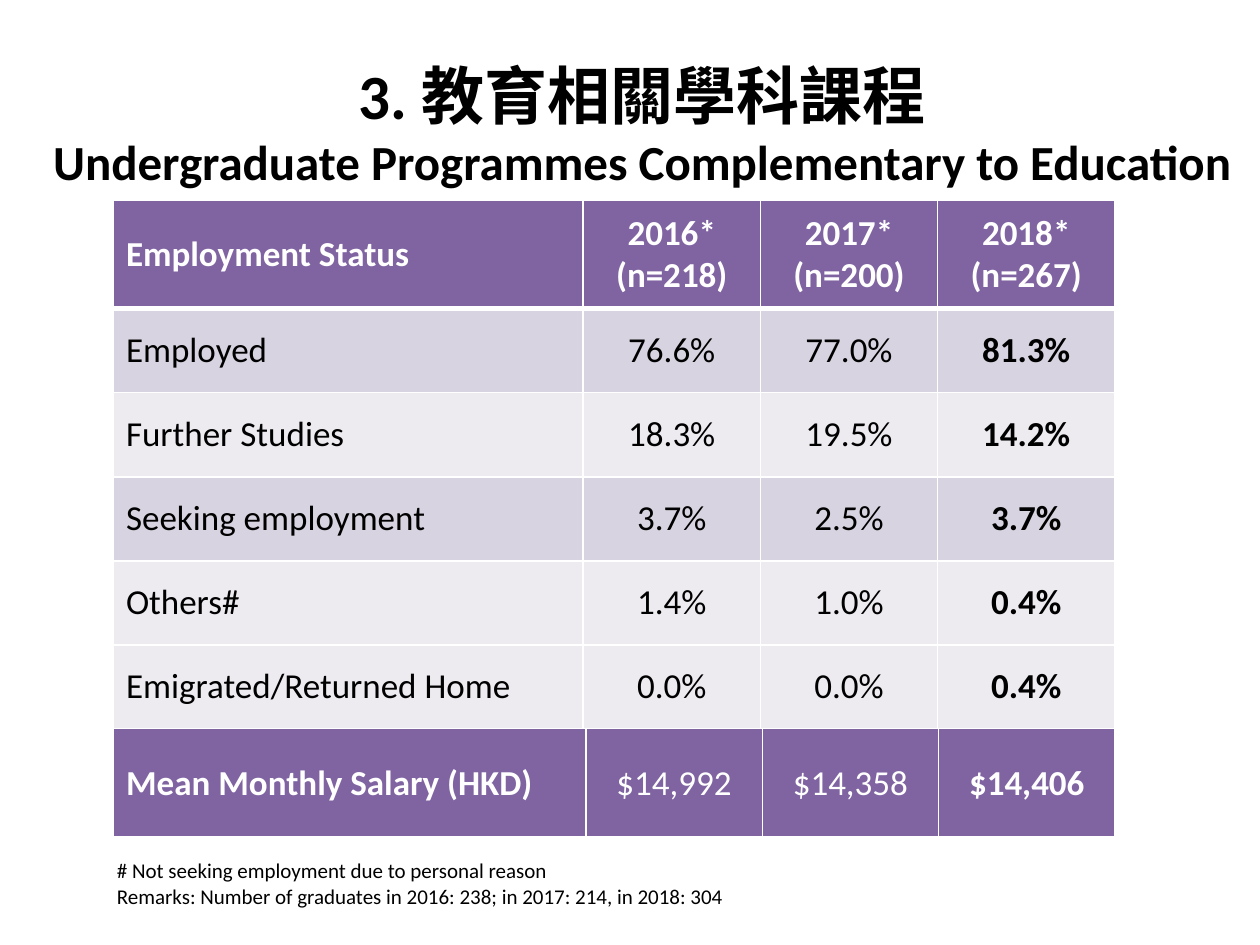
from lxml import etree
from pptx import Presentation
from pptx.dml.color import RGBColor
from pptx.enum.text import MSO_ANCHOR, PP_ALIGN
from pptx.oxml.ns import qn
from pptx.util import Inches, Pt

MIDDLE = MSO_ANCHOR.MIDDLE
TOP = MSO_ANCHOR.TOP
LEFT = PP_ALIGN.LEFT
CENTER = PP_ALIGN.CENTER

WHITE = RGBColor(0xFF, 0xFF, 0xFF)
BLACK = RGBColor(0x00, 0x00, 0x00)
PURPLE = RGBColor(0x80, 0x64, 0xA2)
LILAC = RGBColor(0xD8, 0xD3, 0xE0)
PALE_LILAC = RGBColor(0xED, 0xEA, 0xF0)

FONT = "Calibri"
SLIDE_WIDTH = Inches(10)
SLIDE_HEIGHT = Inches(7.5)
GRID_COLUMNS = 100
GRID_ROWS = 75

TABLE_LEFT = 9
TABLE_WIDTH = 79.5
HEADER_HEIGHT = 8.6
BODY_HEIGHT = 6.67

STATUS_ROWS = [
    ("Employment Status", "2016*\n(n=218)", "2017*\n(n=200)", "2018*\n(n=267)"),
    ("Employed", "76.6%", "77.0%", "81.3%"),
    ("Further Studies", "18.3%", "19.5%", "14.2%"),
    ("Seeking employment", "3.7%", "2.5%", "3.7%"),
    ("Others#", "1.4%", "1.0%", "0.4%"),
    ("Emigrated/Returned Home", "0.0%", "0.0%", "0.4%"),
]
STATUS_FILLS = [PURPLE, LILAC, PALE_LILAC, LILAC, PALE_LILAC, PALE_LILAC]
SALARY_ROW = ("Mean Monthly Salary (HKD)", "$14,992", "$14,358", "$14,406")
REMARKS = (
    "# Not seeking employment due to personal reason\n"
    "Remarks: Number of graduates in 2016: 238; in 2017: 214, in 2018: 304"
)


def across(columns):
    return round(SLIDE_WIDTH * columns / GRID_COLUMNS)


def down(rows):
    return round(SLIDE_HEIGHT * rows / GRID_ROWS)


def write_run(paragraph, text, size=20, color=BLACK, bold=False, align=LEFT):
    paragraph.alignment = align
    run = paragraph.add_run()
    run.text = text
    run.font.name = FONT
    run.font.size = Pt(size)
    run.font.bold = bold
    run.font.color.rgb = color


def write_lines(text_frame, text, **text_format):
    for index, line in enumerate(text.split("\n")):
        paragraph = text_frame.add_paragraph() if index else text_frame.paragraphs[0]
        write_run(paragraph, line, **text_format)


def add_text_frame(slide, left, top, width, height, wrap=True, anchor=TOP):
    box = slide.shapes.add_textbox(across(left), down(top), across(width), down(height))
    box.text_frame.word_wrap = wrap
    box.text_frame.vertical_anchor = anchor
    return box.text_frame


def set_borders(cell, **widths):
    properties = cell._tc.get_or_add_tcPr()
    for side in "LRTB":
        line = etree.SubElement(properties, qn(f"a:ln{side}"), w=str(Pt(widths.get(side, 1))))
        fill = etree.SubElement(line, qn("a:solidFill"))
        etree.SubElement(fill, qn("a:srgbClr"), val=str(WHITE))


def fill_cell(cell, text, fill, borders, **text_format):
    set_borders(cell, **borders)
    cell.fill.solid()
    cell.fill.fore_color.rgb = fill
    cell.vertical_anchor = MIDDLE
    write_lines(cell.text_frame, text, **text_format)


def add_grid_table(slide, top, row_heights, number_width):
    column_widths = [TABLE_WIDTH - 3 * number_width] + [number_width] * 3
    table = slide.shapes.add_table(
        len(row_heights), len(column_widths), across(TABLE_LEFT), down(top),
        across(TABLE_WIDTH), down(sum(row_heights)),
    ).table
    for column, width in zip(table.columns, column_widths):
        column.width = across(width)
    for row, height in zip(table.rows, row_heights):
        row.height = down(height)
    return table


def add_status_table(slide):
    heights = [HEADER_HEIGHT] + [BODY_HEIGHT] * (len(STATUS_ROWS) - 1)
    table = add_grid_table(slide, 15.9, heights, 14.07)
    for row, (texts, fill) in enumerate(zip(STATUS_ROWS, STATUS_FILLS)):
        borders = {0: {"B": 3}, 1: {"T": 3}}.get(row, {})
        for column, text in enumerate(texts):
            fill_cell(
                table.cell(row, column), text, fill, borders,
                color=BLACK if row else WHITE,
                bold=row == 0 or column == 3,
                align=CENTER if column else LEFT,
            )


def add_salary_table(slide):
    table = add_grid_table(slide, 57.8, [8.7], 14)
    for column, text in enumerate(SALARY_ROW):
        fill_cell(
            table.cell(0, column), text, PURPLE, {"B": 3},
            color=WHITE, bold=column in (0, 3), align=CENTER if column else LEFT,
        )


def add_title(slide):
    text_frame = add_text_frame(slide, -7.5, 3.6, 116.9, 12.4, anchor=MIDDLE)
    paragraph = text_frame.paragraphs[0]
    write_run(paragraph, "3. 教育相關學科課程", size=36, bold=True, align=CENTER)
    paragraph.add_line_break()
    write_run(
        paragraph, "Undergraduate Programmes Complementary to Education",
        size=28, bold=True, align=CENTER,
    )


def main():
    presentation = Presentation()
    presentation.slide_width = SLIDE_WIDTH
    presentation.slide_height = SLIDE_HEIGHT
    slide = presentation.slides.add_slide(presentation.slide_layouts[6])
    add_status_table(slide)
    remarks_frame = add_text_frame(slide, 8.3, 67.6, 50.8, 5, wrap=False)
    write_lines(remarks_frame, REMARKS, size=12)
    add_title(slide)
    add_salary_table(slide)
    presentation.save("out.pptx")


if __name__ == "__main__":
    main()
